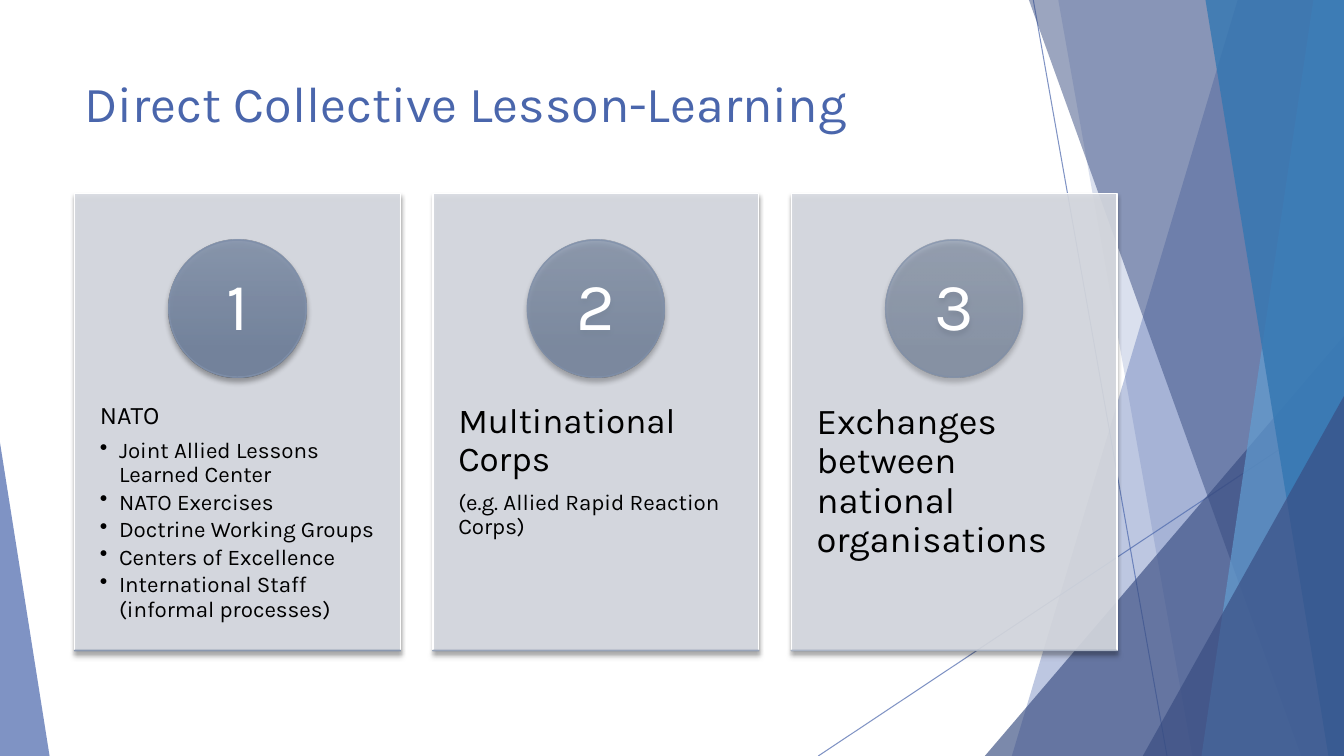
from dataclasses import dataclass

from lxml.etree import SubElement
from pptx import Presentation
from pptx.dml.color import RGBColor
from pptx.enum.shapes import MSO_CONNECTOR, MSO_SHAPE
from pptx.enum.text import MSO_ANCHOR, PP_ALIGN
from pptx.oxml.ns import qn
from pptx.util import Cm, Pt


@dataclass(frozen=True)
class Theme:
    font: str = "Karla"
    blue: str = "4A66AC"
    navy: str = "384C81"
    sky: str = "629DD1"
    ocean: str = "3477B2"
    card: str = "D8DBE2"
    badge_top: str = "8796AE"
    badge_bottom: str = "71829D"
    badge_edge: str = "7F8FA9"
    white: str = "FFFFFF"
    black: str = "000000"
    title_size: int = 36
    number_size: int = 48
    small_size: int = 16


theme = Theme()
rgb = RGBColor.from_string


def set_alpha(element, percent):
    """Give every colour inside the element the same opacity."""
    for colour in element.iter(qn("a:srgbClr")):
        SubElement(colour, qn("a:alpha"), val=str(percent * 1000))


def add_shadow(shape, blur, distance):
    """Cast a soft shadow straight down."""
    shape.shadow.inherit = False
    effects = shape._element.spPr.find(qn("a:effectLst"))
    shadow = SubElement(effects, qn("a:outerShdw"), blurRad=str(Pt(blur)),
                        dist=str(Pt(distance)), dir="5400000", rotWithShape="0")
    colour = SubElement(shadow, qn("a:srgbClr"), val=theme.black)
    SubElement(colour, qn("a:alpha"), val="35000")


WIDTH, HEIGHT = 33.87, 19.05
deck = Presentation()
deck.slide_width, deck.slide_height = Cm(WIDTH), Cm(HEIGHT)
slide = deck.slides.add_slide(deck.slide_layouts[6])
shapes = slide.shapes

# Thin lines behind the facets
for x1, y1, x2 in [(26.04, 0, 29.41), (WIDTH, 10.24, 20.62)]:
    ray = shapes.add_connector(MSO_CONNECTOR.STRAIGHT, Cm(x1), Cm(y1), Cm(x2), Cm(HEIGHT))
    ray.line.color.rgb = rgb(theme.blue)
    ray.line.width = Pt(0.75)
    set_alpha(ray._element.spPr, 70)
    SubElement(ray._element.spPr, qn("a:effectLst"))

# Facets, back to front: bands are (top x, bottom x) and reach the right edge,
# peaks are (left, top, right, apex) and stand on the bottom edge
facets = [
    ((31.19, 25.5), theme.blue, 36),
    ((26.67, 30.05), theme.blue, 20),
    ((24.82, 8.46, WIDTH, 1), theme.navy, 66),
    ((25.93, 32.79), theme.navy, 50),
    ((33.1, 30.28), theme.sky, 70),
    ((30.38, 33.48), theme.ocean, 80),
    ((28.8, 9.98, WIDTH, 1), theme.navy, 66),
    ((0, 11.15, 1.25, 0), theme.blue, 70),
]
for outline, colour, alpha in facets:
    if len(outline) == 2:
        top_x, bottom_x = outline
        band = shapes.build_freeform(Cm(top_x), 0)
        band.add_line_segments([(Cm(WIDTH), 0), (Cm(WIDTH), Cm(HEIGHT)),
                                (Cm(bottom_x), Cm(HEIGHT))], close=True)
        facet = band.convert_to_shape()
    else:
        left, top, right, apex = outline
        facet = shapes.add_shape(MSO_SHAPE.ISOSCELES_TRIANGLE, Cm(left), Cm(top),
                                 Cm(right - left), Cm(HEIGHT - top))
        facet.adjustments[0] = apex
    facet.fill.solid()
    facet.fill.fore_color.rgb = rgb(colour)
    facet.line.fill.background()
    set_alpha(facet._element.spPr, alpha)
    facet.shadow.inherit = False

# Title
title = shapes.add_textbox(Cm(1.88), Cm(1.7), Cm(23.88), Cm(3.66)).text_frame
title.word_wrap = True
heading = title.paragraphs[0]
heading.text = "Direct Collective Lesson-Learning"
heading.font.name = theme.font
heading.font.size = Pt(theme.title_size)
heading.font.color.rgb = rgb(theme.blue)

# Cards: heading, heading size, details, whether the details are bulleted
cards = [
    ("NATO", 18, ["Joint Allied Lessons Learned Center", "NATO Exercises",
                  "Doctrine Working Groups", "Centers of Excellence",
                  "International Staff (informal processes)"], True),
    ("Multinational Corps", 25, ["(e.g. Allied Rapid Reaction Corps)"], False),
    ("Exchanges between national organisations", 26, [], False),
]
CARD_LEFT, CARD_TOP, CARD_WIDTH, CARD_HEIGHT, PITCH = 1.88, 4.88, 8.21, 11.51, 9.03
BADGE = 3.45

for index, (topic, topic_size, details, bulleted) in enumerate(cards):
    left = CARD_LEFT + index * PITCH
    badge_alpha = 90 - 16 * index

    # Panel
    panel = shapes.add_shape(MSO_SHAPE.RECTANGLE, Cm(left), Cm(CARD_TOP),
                             Cm(CARD_WIDTH), Cm(CARD_HEIGHT))
    panel.fill.solid()
    panel.fill.fore_color.rgb = rgb(theme.card)
    set_alpha(panel._element.spPr, 90)
    panel.line.color.rgb = rgb(theme.white)
    panel.line.width = Pt(1)
    add_shadow(panel, 3, 2)

    # Topic and details
    body = shapes.add_textbox(Cm(left), Cm(9.25), Cm(CARD_WIDTH), Cm(6.91)).text_frame
    body.word_wrap = True
    body.margin_left = body.margin_right = Cm(0.64)
    body.margin_top = body.margin_bottom = Cm(0.91)
    for row, wording in enumerate([topic, *details]):
        entry = body.add_paragraph() if row else body.paragraphs[0]
        entry.text = wording
        size = theme.small_size if row else topic_size
        is_bullet = bulleted and row > 0
        if is_bullet:
            entry.level = 1
            properties = entry._p.get_or_add_pPr()
            properties.set("marL", str(Cm(0.48)))
            properties.set("indent", str(-Cm(0.48)))
            SubElement(properties, qn("a:buChar"), char="•")
        entry.line_spacing = 0.9
        entry.space_after = Pt(size * (0.15 if is_bullet else 0.35))
        entry.font.name = theme.font
        entry.font.size = Pt(size)
        entry.font.color.rgb = rgb(theme.black)

    # Numbered badge and the thin bar under the panel
    badge = shapes.add_shape(MSO_SHAPE.OVAL, Cm(left + (CARD_WIDTH - BADGE) / 2),
                             Cm(6.05), Cm(BADGE), Cm(BADGE))
    bar = shapes.add_shape(MSO_SHAPE.RECTANGLE, Cm(left), Cm(CARD_TOP + CARD_HEIGHT),
                           Cm(CARD_WIDTH), Cm(0.01))
    for accent, alpha in [(badge, badge_alpha), (bar, badge_alpha - 8)]:
        accent.fill.gradient()
        accent.fill.gradient_angle = 270
        upper, lower = accent.fill.gradient_stops
        upper.color.rgb, upper.position = rgb(theme.badge_top), 0
        lower.color.rgb, lower.position = rgb(theme.badge_bottom), 0.78
        accent.line.color.rgb = rgb(theme.badge_edge)
        accent.line.width = Pt(1)
        set_alpha(accent._element.spPr, alpha)
        add_shadow(accent, 4, 3)

    label = badge.text_frame
    label.vertical_anchor = MSO_ANCHOR.MIDDLE
    label.margin_left = label.margin_right = Cm(0.28)
    label.margin_top = label.margin_bottom = Cm(0.03)
    number = label.paragraphs[0]
    number.text = str(index + 1)
    number.alignment = PP_ALIGN.CENTER
    number.line_spacing = 0.9
    number.font.name = theme.font
    number.font.size = Pt(theme.number_size)
    number.font.color.rgb = rgb(theme.white)

deck.save("out.pptx")
